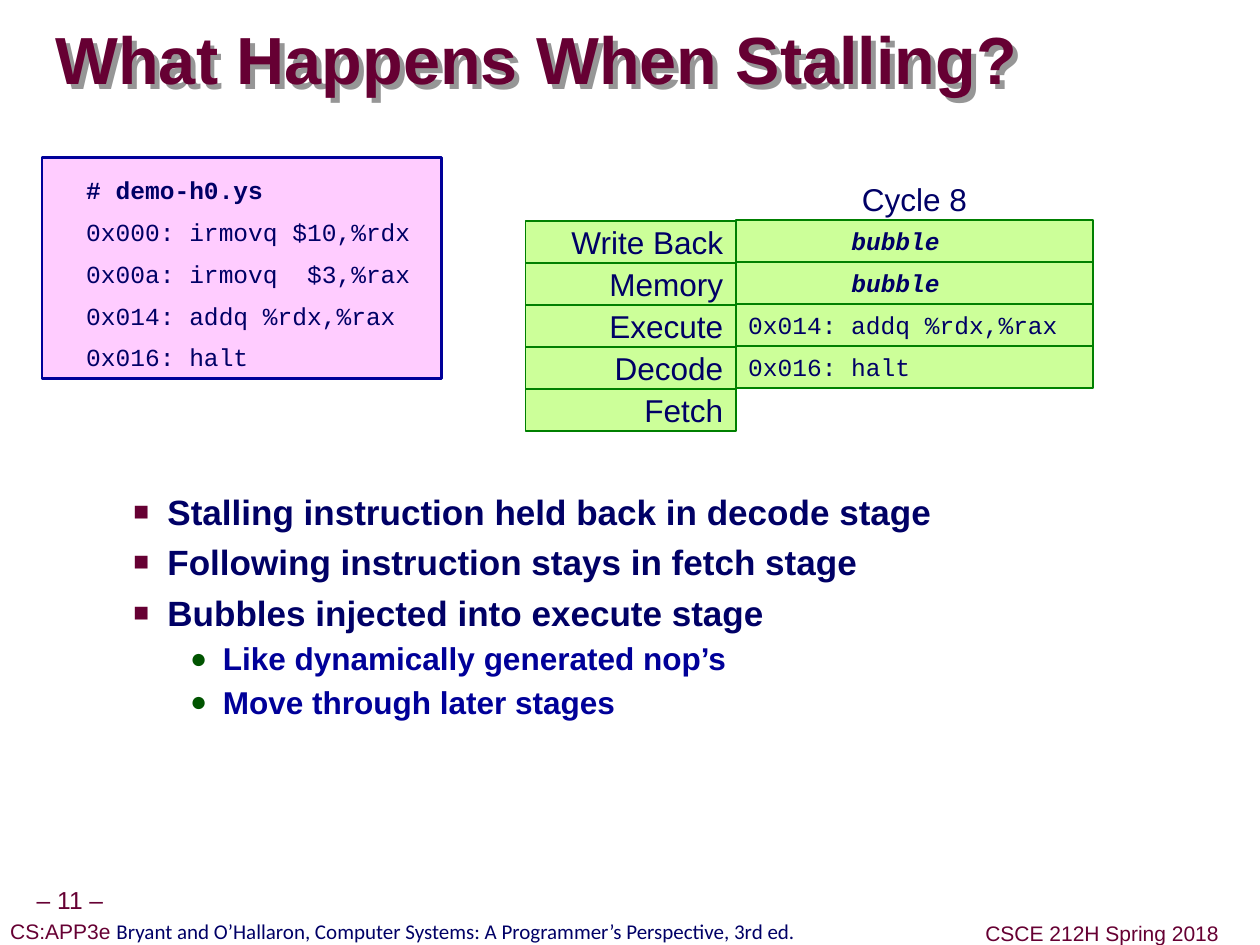
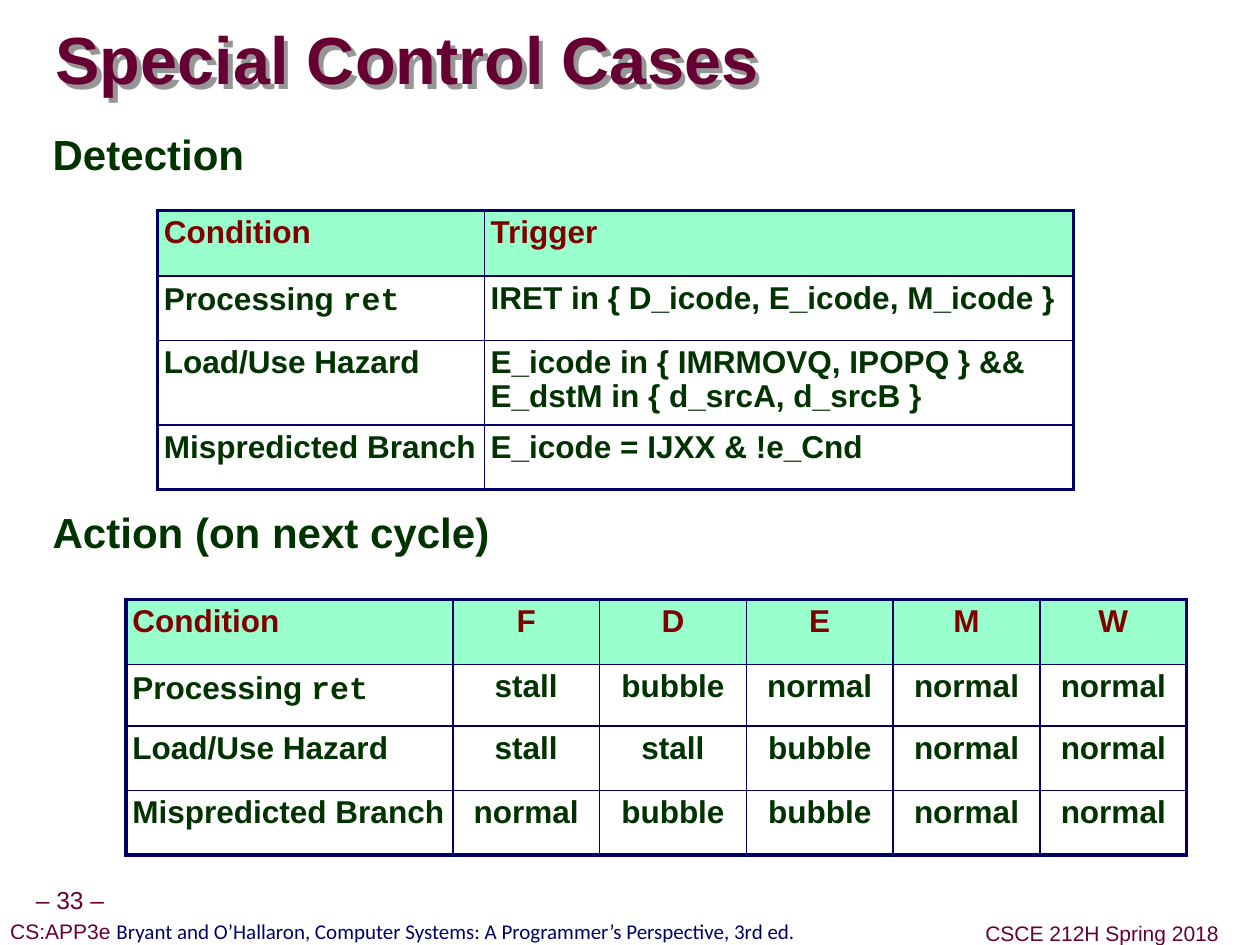
from dataclasses import dataclass

from lxml import etree
from pptx import Presentation
from pptx.dml.color import RGBColor
from pptx.enum.shapes import MSO_SHAPE
from pptx.enum.text import MSO_ANCHOR, PP_ALIGN
from pptx.oxml.ns import qn
from pptx.util import Pt

RECT = MSO_SHAPE.RECTANGLE
LEFT, CENTER, RIGHT = PP_ALIGN.LEFT, PP_ALIGN.CENTER, PP_ALIGN.RIGHT
TOP, MIDDLE = MSO_ANCHOR.TOP, MSO_ANCHOR.MIDDLE


@dataclass(frozen=True)
class Theme:
    sans: str = "Arial"
    book: str = "Calibri"
    mono: str = "Courier New"
    maroon: str = "660033"
    navy: str = "000066"
    blue: str = "000099"
    green: str = "003300"
    dot: str = "005400"
    header_text: str = "800000"
    header_fill: str = "99FFCC"
    pink: str = "FFCCFF"
    lime: str = "CCFF99"
    lime_edge: str = "008000"
    shadow: str = "969696"
    title: float = 38
    heading: float = 24
    body: float = 20
    label: float = 18
    code: float = 14
    footer: float = 12
    thin: float = 1
    thick: float = 2.25


T = Theme()
PAD = (7.2, 3.6, 7.2, 3.6)
TIGHT = (3.6, 3.6, 3.6, 3.6)
FLUSH = (0, 0, 0, 0)


def rgb(color):
    return RGBColor.from_string(color)


def sub(parent, tag, **attrs):
    """Append a DrawingML element and return it."""
    el = etree.SubElement(parent, qn(tag))
    for name, value in attrs.items():
        el.set(name, str(value))
    return el


def write(tf, paras, size=T.label, font=T.sans, color=T.navy, bold=False,
          italic=False, align=LEFT, spacing=None, gap=0):
    """Fill a frame; a paragraph is a string or a list of (text, overrides)."""
    base = dict(size=size, font=font, color=color, bold=bold, italic=italic)
    for i, para in enumerate(paras):
        p = tf.paragraphs[0] if i == 0 else tf.add_paragraph()
        p.alignment = align
        if spacing:
            p.line_spacing = spacing
        if i and gap:
            p.space_before = Pt(gap)
        for text, changes in [(para, {})] if isinstance(para, str) else para:
            look = {**base, **changes}
            r = p.add_run()
            r.text = text
            r.font.size = Pt(look["size"])
            r.font.name = look["font"]
            r.font.bold = look["bold"]
            r.font.italic = look["italic"]
            r.font.color.rgb = rgb(look["color"])


def set_frame(tf, insets=PAD, anchor=MIDDLE, wrap=True):
    tf.word_wrap = wrap
    tf.vertical_anchor = anchor
    (tf.margin_left, tf.margin_top,
     tf.margin_right, tf.margin_bottom) = map(Pt, insets)


def add_text(s, box, paras, insets=PAD, anchor=MIDDLE, wrap=True, **fmt):
    sp = s.shapes.add_textbox(*map(Pt, box))
    set_frame(sp.text_frame, insets, anchor, wrap)
    write(sp.text_frame, paras, **fmt)
    return sp


def add_panel(s, box, paras, fill, edge, width=T.thin, insets=PAD,
              anchor=MIDDLE, **fmt):
    sp = s.shapes.add_shape(RECT, *map(Pt, box))
    sp.shadow.inherit = False
    sp.fill.solid()
    sp.fill.fore_color.rgb = rgb(fill)
    sp.line.color.rgb = rgb(edge)
    sp.line.width = Pt(width)
    set_frame(sp.text_frame, insets, anchor)
    write(sp.text_frame, paras, **fmt)


def add_slide(prs, title, number):
    """Blank slide with the shadowed title and the footer."""
    s = prs.slides.add_slide(prs.slide_layouts[6])
    foot = dict(insets=TIGHT, wrap=False, align=CENTER, color=T.maroon,
                spacing=0.9, size=T.footer)
    add_text(s, (16.2, 503.3, 47.5, 22.3), [f"– {number} –"],
             **{**foot, "size": T.code})
    book = ("Bryant and O’Hallaron, Computer Systems: "
            "A Programmer’s Perspective, 3rd ed.")
    add_text(s, (0, 522.4, 460, 20),
             [[("CS:APP3e ", {}),
               (book, dict(font=T.book, color=T.navy))]], **foot)
    add_text(s, (558.7, 523.4, 141, 20), ["CSCE 212H Spring 2018"], **foot)

    sp = add_text(s, (31.7, 5.8, 685.4, 61.2), [title], insets=FLUSH,
                  size=T.title, color=T.maroon, bold=True, spacing=0.87)
    sp.shadow.inherit = False
    effects = sp.element.spPr.find(qn("a:effectLst"))
    shadow = sub(effects, "a:outerShdw", dist=Pt(4), dir=2700000,
                 algn="ctr", rotWithShape=0)
    sub(shadow, "a:srgbClr", val=T.shadow)
    return s


def add_bullet(p, char, color, percent, left, hang):
    pPr = p._p.get_or_add_pPr()
    pPr.set("marL", str(Pt(left)))
    pPr.set("indent", str(-Pt(hang)))
    sub(sub(pPr, "a:buClr"), "a:srgbClr", val=color)
    sub(pPr, "a:buSzPct", val=percent * 1000)
    sub(pPr, "a:buFont", typeface=T.sans)
    sub(pPr, "a:buChar", char=char)


def add_outline(s, box, items):
    """Two-level bullet list from (level, text) pairs."""
    looks = [dict(size=T.body, color=T.navy), dict(size=T.label, color=T.blue)]
    bullets = [("■", T.maroon, 75, 58.3, 19.4), ("●", T.dot, 90, 90, 18.7)]
    sp = add_text(s, box, [[(text, looks[level])] for level, text in items],
                  anchor=TOP, bold=True)
    for i, (level, _) in enumerate(items):
        p = sp.text_frame.paragraphs[i]
        add_bullet(p, *bullets[level])
        if level:
            p.line_spacing = 1.07
        if i:
            p.space_before = Pt((4.8, 1.9)[level])


def set_borders(cell, **widths):
    tcPr = cell._tc.get_or_add_tcPr()
    for side in "LRTB":
        ln = sub(tcPr, f"a:ln{side}", w=Pt(widths[side]))
        sub(sub(ln, "a:solidFill"), "a:srgbClr", val=T.navy)


def add_grid(s, left, top, widths, heights, rows, align=LEFT):
    """Table with a thick frame and tinted header; align is for later columns."""
    tbl = s.shapes.add_table(len(rows), len(widths), Pt(left), Pt(top),
                             Pt(sum(widths)), Pt(sum(heights))).table
    tbl.first_row = tbl.horz_banding = False
    for col, w in zip(tbl.columns, widths):
        col.width = Pt(w)
    for row, h in zip(tbl.rows, heights):
        row.height = Pt(h)
    last_r, last_c = len(rows) - 1, len(widths) - 1
    for r, row in enumerate(rows):
        for c, content in enumerate(row):
            cell = tbl.cell(r, c)
            edges = dict(L=c == 0, R=c == last_c, T=r == 0, B=r == last_r)
            set_borders(cell, **{k: T.thick if outer else T.thin
                                 for k, outer in edges.items()})
            if r == 0:
                cell.fill.solid()
                cell.fill.fore_color.rgb = rgb(T.header_fill)
            else:
                cell.fill.background()
            (cell.margin_left, cell.margin_top,
             cell.margin_right, cell.margin_bottom) = map(Pt, TIGHT)
            cell.vertical_anchor = TOP
            write(cell.text_frame, [content], bold=True, spacing=0.95,
                  color=T.green if r else T.header_text,
                  align=align if c else LEFT)


def stalling_slide(prs):
    s = add_slide(prs, "What Happens When Stalling?", 11)
    add_outline(s, (30.2, 276.3, 653, 204), [
        (0, "Stalling instruction held back in decode stage"),
        (0, "Following instruction stays in fetch stage"),
        (0, "Bubbles injected into execute stage"),
        (1, "Like dynamically generated nop’s"),
        (1, "Move through later stages"),
    ])
    add_panel(s, (24, 90, 228, 126), [
        [("# demo-h0.ys", dict(bold=True))],
        "0x000: irmovq $10,%rdx",
        "0x00a: irmovq  $3,%rax",
        "0x014: addq %rdx,%rax",
        "0x016: halt",
    ], T.pink, T.blue, width=1.5, insets=(25.2, 9.8, 0, 0), anchor=TOP,
        size=T.code, font=T.mono, gap=7.1)

    add_text(s, (420, 101.5, 204, 24), ["Cycle 8"], align=CENTER)
    left, top, pitch = 300, 126, 24
    bubble_pad = (66, 3.6, 7.2, 3.6)
    stages = [("Write Back", "bubble"), ("Memory", "bubble"),
              ("Execute", "0x014: addq %rdx,%rax"),
              ("Decode", "0x016: halt"), ("Fetch", None)]
    for i, (stage, content) in enumerate(stages):
        y = top + i * pitch
        if content:
            is_bubble = content == "bubble"
            add_panel(s, (left + 120, y - 0.5, 204, pitch), [content],
                      T.lime, T.lime_edge, size=T.code, font=T.mono,
                      insets=bubble_pad if is_bubble else PAD,
                      bold=is_bubble, italic=is_bubble)
        add_panel(s, (left, y, 120, pitch), [stage], T.lime, T.lime_edge,
                  align=RIGHT)


def control_cases_slide(prs):
    s = add_slide(prs, "Special Control Cases", 33)
    for y, heading in [(69.5, "Detection"), (285.3, "Action (on next cycle)")]:
        add_text(s, (23, y, 653, 36), [heading], anchor=TOP,
                 size=T.heading, color=T.green, bold=True)

    ret = [("Processing ", {}), ("ret", dict(font=T.mono))]
    conditions = ["Condition", ret, "Load/Use Hazard", "Mispredicted Branch"]
    triggers = [
        "Trigger",
        "IRET in { D_icode, E_icode, M_icode }",
        "E_icode in { IMRMOVQ, IPOPQ } && E_dstM in { d_srcA, d_srcB }",
        "E_icode = IJXX & !e_Cnd",
    ]
    actions = ["F D E M W", "stall bubble normal normal normal",
               "stall stall bubble normal normal",
               "normal bubble bubble normal normal"]
    add_grid(s, 90, 120.2, [186.5, 336.2], [37.3, 36.8, 37.3, 36.8],
             list(zip(conditions, triggers)))
    add_grid(s, 72, 342, [186.5] + [83.8] * 5, [37.3, 35, 37, 36.8],
             [[name, *row.split()] for name, row in zip(conditions, actions)],
             align=CENTER)


def main():
    prs = Presentation()
    prs.slide_width, prs.slide_height = Pt(719.3), Pt(539.3)
    stalling_slide(prs)
    control_cases_slide(prs)
    prs.save("out.pptx")


if __name__ == "__main__":
    main()
